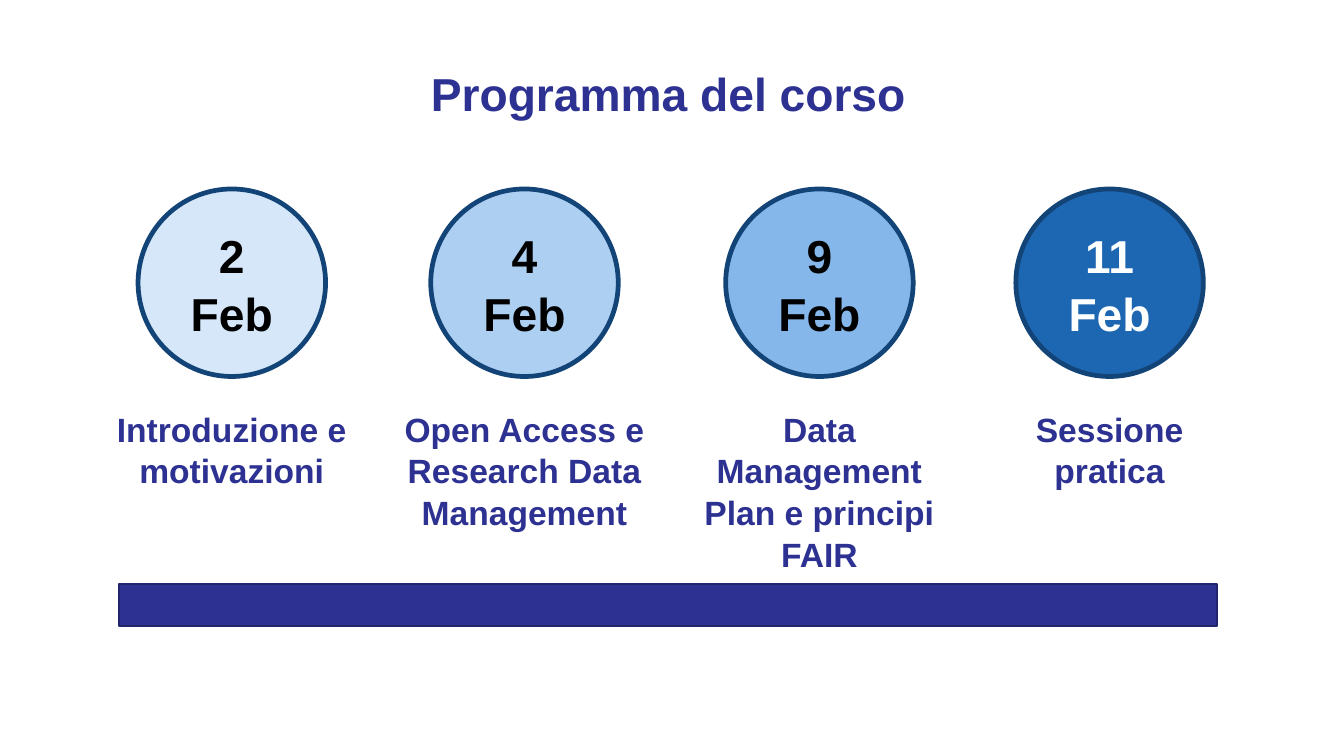
from pptx import Presentation
from pptx.dml.color import RGBColor
from pptx.enum.shapes import MSO_SHAPE
from pptx.enum.text import MSO_ANCHOR, PP_ALIGN
from pptx.util import Cm, Pt

INDIGO = RGBColor(0x2D, 0x32, 0x92)
DARK_INDIGO = RGBColor(0x21, 0x25, 0x6C)
OUTLINE_BLUE = RGBColor(0x13, 0x44, 0x77)
BLACK = RGBColor(0x00, 0x00, 0x00)
WHITE = RGBColor(0xFE, 0xFF, 0xFF)
PALE_BLUE = RGBColor(0xD5, 0xE7, 0xF8)
LIGHT_BLUE = RGBColor(0xAD, 0xCF, 0xF2)
MID_BLUE = RGBColor(0x86, 0xB7, 0xEB)
STRONG_BLUE = RGBColor(0x1D, 0x66, 0xB2)

CIRCLE_SIZE = 6.3
LABEL_OFFSET = 7.32
LABEL_HEIGHT = 7.72

SESSIONS = [
    (3.46, 8.66, "2\nFeb", PALE_BLUE, BLACK, "Introduzione e motivazioni"),
    (13.23, 8.79, "4\nFeb", LIGHT_BLUE, BLACK, "Open Access e Research Data Management"),
    (23.14, 8.79, "9\nFeb", MID_BLUE, BLACK, "Data Management Plan e principi FAIR"),
    (32.89, 8.79, "11\nFeb", STRONG_BLUE, WHITE, "Sessione pratica"),
]


def set_attributes(target, values):
    """Set each named value on the target."""
    for name, value in values.items():
        setattr(target, name, value)


def write_text(shape, text, size, color, anchor, spacing, margin=0):
    """Write one centred bold paragraph in a shape."""
    frame = shape.text_frame
    set_attributes(frame, {
        "word_wrap": True, "vertical_anchor": anchor,
        "margin_left": Cm(margin), "margin_right": Cm(margin),
        "margin_top": Cm(margin), "margin_bottom": Cm(margin),
    })
    paragraph = frame.paragraphs[0]
    set_attributes(paragraph, {
        "text": text, "alignment": PP_ALIGN.CENTER, "line_spacing": spacing,
    })
    for run in paragraph.runs:
        set_attributes(run.font, {"name": "Arial", "size": Pt(size), "bold": True})
        run.font.color.rgb = color


def add_filled_shape(slide, kind, box, fill, line, line_width):
    """Add a flat shape with a fill and an outline."""
    shape = slide.shapes.add_shape(kind, *map(Cm, box))
    shape.shadow.inherit = False
    shape.fill.solid()
    shape.fill.fore_color.rgb = fill
    shape.line.color.rgb = line
    shape.line.width = Pt(line_width)
    return shape


def add_title(slide, left, top, width, height):
    """Place the heading in its box."""
    title = slide.shapes.add_textbox(*map(Cm, (left, top, width, height)))
    write_text(title, "Programma del corso", 44, INDIGO, MSO_ANCHOR.BOTTOM, 0.85)


def add_session(slide, left, top, width, date, fill, date_color, topic):
    """Place a date circle centred above its topic."""
    label_box = (left, top + LABEL_OFFSET, width, LABEL_HEIGHT)
    label = slide.shapes.add_textbox(*map(Cm, label_box))
    write_text(label, topic, 32, INDIGO, MSO_ANCHOR.TOP, 1.04)
    circle_box = (left + (width - CIRCLE_SIZE) / 2, top, CIRCLE_SIZE, CIRCLE_SIZE)
    circle = add_filled_shape(slide, MSO_SHAPE.OVAL, circle_box, fill, OUTLINE_BLUE, 4.5)
    write_text(circle, date, 44, date_color, MSO_ANCHOR.MIDDLE, 1.05, 0.13)


def add_bar(slide, left, top, width, height):
    """Place the base bar in its box."""
    box = (left, top, width, height)
    add_filled_shape(slide, MSO_SHAPE.RECTANGLE, box, INDIGO, DARK_INDIGO, 2)


def main():
    """Build the course programme slide."""
    presentation = Presentation()
    set_attributes(presentation, {"slide_width": Cm(45.16), "slide_height": Cm(25.4)})
    slide = presentation.slides.add_slide(presentation.slide_layouts[6])
    add_title(slide, 1.98, 1.6, 40.97, 2.46)
    for left, width, *content in SESSIONS:
        add_session(slide, left, 6.35, width, *content)
    add_bar(slide, 4.01, 19.61, 36.88, 1.42)
    presentation.save("out.pptx")


if __name__ == "__main__":
    main()
